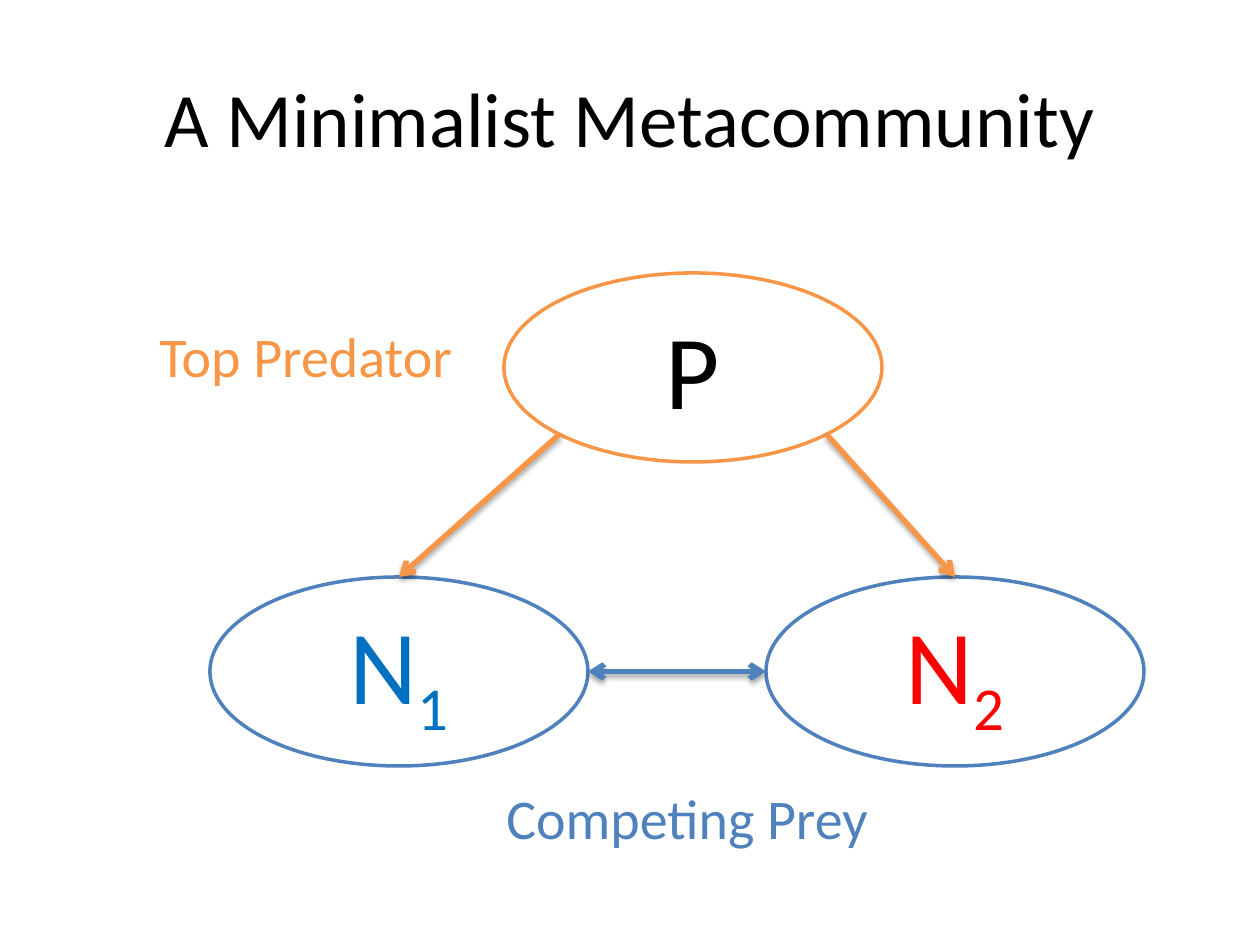
from math import sqrt

from lxml.etree import SubElement
from pptx import Presentation
from pptx.dml.color import RGBColor
from pptx.enum.shapes import MSO_CONNECTOR, MSO_SHAPE
from pptx.enum.text import MSO_ANCHOR, MSO_AUTO_SIZE, PP_ALIGN
from pptx.oxml.ns import qn
from pptx.util import Pt

EMU_PER_PX = 914400 / 126
FONT = "Calibri"
ORANGE, BLUE = "F79646", "4F81BD"
BLACK, WHITE = "000000", "FFFFFF"
OVAL_WIDTH, OVAL_HEIGHT = 378, 189


def px(length):
    return round(length * EMU_PER_PX)


def color(hex_string):
    return RGBColor.from_string(hex_string)


def format_font(paragraph, size, hex_string):
    paragraph.font.name = FONT
    paragraph.font.size = Pt(size)
    paragraph.font.color.rgb = color(hex_string)


def set_title(slide, text):
    title = slide.shapes.title
    title.left, title.top, title.width, title.height = px(63), px(38), px(1134), px(158)
    title.text_frame.text = text
    title.text_frame.vertical_anchor = MSO_ANCHOR.MIDDLE
    paragraph = title.text_frame.paragraphs[0]
    paragraph.alignment = PP_ALIGN.CENTER
    format_font(paragraph, 44, BLACK)


def add_species(slide, left, top, letter, subscript, text_color, line_color):
    oval = slide.shapes.add_shape(
        MSO_SHAPE.OVAL, px(left), px(top), px(OVAL_WIDTH), px(OVAL_HEIGHT))
    oval.shadow.inherit = False
    oval.fill.solid()
    oval.fill.fore_color.rgb = color(WHITE)
    oval.line.color.rgb = color(line_color)
    oval.line.width = Pt(2)
    oval.text_frame.vertical_anchor = MSO_ANCHOR.MIDDLE
    paragraph = oval.text_frame.paragraphs[0]
    paragraph.alignment = PP_ALIGN.CENTER
    format_font(paragraph, 60, text_color)
    paragraph.add_run().text = letter
    if subscript:
        run = paragraph.add_run()
        run.text = subscript
        run.font._element.set("baseline", "-25000")
    return oval


def add_arrow(slide, start, end, line_color, both_ends=False):
    arrow = slide.shapes.add_connector(MSO_CONNECTOR.STRAIGHT, *start, *end)
    arrow.line.color.rgb = color(line_color)
    arrow.line.width = Pt(3)

    # Arrowheads
    line = arrow.line._get_or_add_ln()
    if both_ends:
        SubElement(line, qn("a:headEnd"), type="arrow")
    SubElement(line, qn("a:tailEnd"), type="arrow")

    # Soft shadow below the line
    effects = SubElement(arrow._element.spPr, qn("a:effectLst"))
    shadow = SubElement(effects, qn("a:outerShdw"), blurRad=str(Pt(3.1)),
                        dist=str(Pt(1.8)), dir="5400000", rotWithShape="0")
    shadow_color = SubElement(shadow, qn("a:srgbClr"), val=BLACK)
    SubElement(shadow_color, qn("a:alpha"), val="35000")
    return arrow


def add_label(slide, left, top, width, text, text_color):
    label = slide.shapes.add_textbox(px(left), px(top), px(width), px(81))
    label.text_frame.word_wrap = False
    label.text_frame.auto_size = MSO_AUTO_SIZE.SHAPE_TO_FIT_TEXT
    label.text_frame.text = text
    format_font(label.text_frame.paragraphs[0], 32, text_color)


def main():
    presentation = Presentation()
    presentation.slide_width, presentation.slide_height = px(1260), px(945)
    slide = presentation.slides.add_slide(presentation.slide_layouts[5])
    set_title(slide, "A Minimalist Metacommunity")

    # Species
    predator = add_species(slide, 504, 273, "P", "", BLACK, ORANGE)
    prey_2 = add_species(slide, 766, 577, "N", "2", "FF0000", BLUE)
    prey_1 = add_species(slide, 210, 577, "N", "1", "0070C0", BLUE)

    # Predation: from the diagonal points of the predator to the top of each prey
    center_x = predator.left + predator.width // 2
    center_y = predator.top + predator.height // 2
    offset_x = round(predator.width / 2 / sqrt(2))
    offset_y = round(predator.height / 2 / sqrt(2))
    for prey, side in ((prey_2, 1), (prey_1, -1)):
        start = (center_x + side * offset_x, center_y + offset_y)
        top_middle = (prey.left + prey.width // 2, prey.top)
        arrow = add_arrow(slide, start, top_middle, ORANGE)
        arrow.end_connect(prey, 0)

    # Competition: between the facing sides of the prey
    middle = prey_1.top + prey_1.height // 2
    add_arrow(slide, (prey_1.left + prey_1.width, middle), (prey_2.left, middle),
              BLUE, both_ends=True)

    # Labels
    add_label(slide, 147, 315, 321, "Top Predator", ORANGE)
    add_label(slide, 494, 777, 391, "Competing Prey", BLUE)

    presentation.save("out.pptx")


if __name__ == "__main__":
    main()
